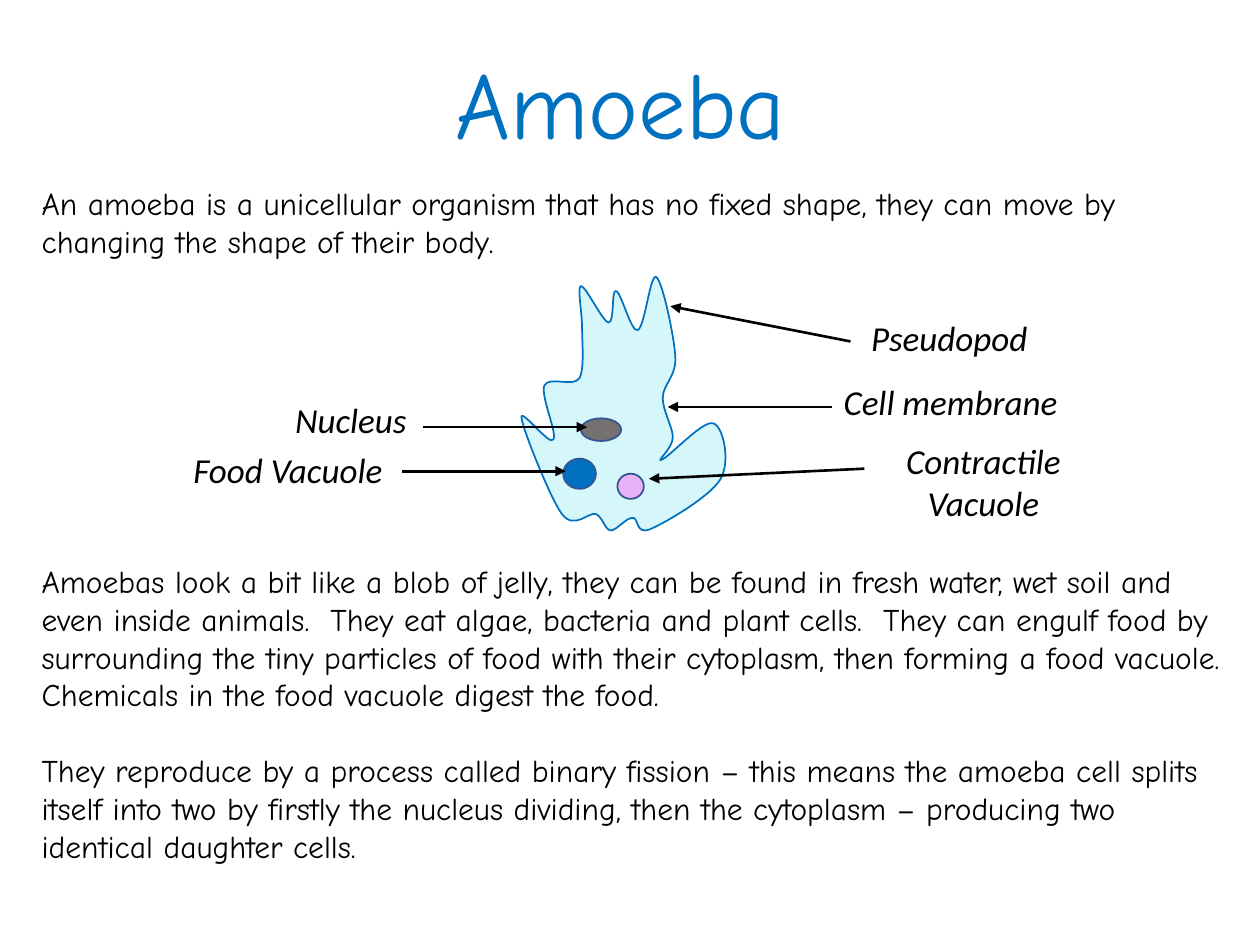
from lxml import etree
from pptx import Presentation
from pptx.dml.color import RGBColor
from pptx.enum.shapes import MSO_CONNECTOR as Connector, MSO_SHAPE as Shape
from pptx.enum.text import MSO_ANCHOR as Anchor, MSO_AUTO_SIZE as AutoSize, PP_ALIGN as Align
from pptx.oxml.ns import qn
from pptx.util import Inches, Pt


def color(hex_string):
    return RGBColor.from_string(hex_string)


def write(shape, box, texts, font_format, alignment):
    """Place a text shape and fill it with formatted paragraphs."""
    shape.left, shape.top, shape.width, shape.height = map(Inches, box)
    frame = shape.text_frame
    frame.text = "\n".join(texts)
    frame.word_wrap = True
    frame.auto_size = AutoSize.NONE
    frame.vertical_anchor = Anchor.TOP
    for paragraph in frame.paragraphs:
        paragraph.alignment = alignment
        paragraph.space_before = Pt(0)
        font = paragraph.runs[0].font
        for name, value in font_format.items():
            setattr(font, name, value)
        font.color.rgb = color("0070C0" if font.size == Pt(54) else "000000")


presentation = Presentation()
presentation.slide_width, presentation.slide_height = Inches(10), Inches(7.5)
slide = presentation.slides.add_slide(presentation.slide_layouts[1])
shapes = slide.shapes

# Title and body
write(shapes.title, (0.21, 0.31, 9.43, 1.01), ["Amoeba"],
      {"name": "Comic Neue", "size": Pt(54)}, Align.CENTER)

body = slide.placeholders[1]
write(body, (0.23, 1.41, 9.62, 5.55), [
    "An amoeba is a unicellular organism that has no fixed shape, they can move by "
    "changing the shape of their body.",
    "Amoebas look a bit like a blob of jelly, they can be found in fresh water, wet soil "
    "and even inside animals.  They eat algae, bacteria and plant cells.  They can engulf "
    "food by surrounding the tiny particles of food with their cytoplasm, then forming a "
    "food vacuole. Chemicals in the food vacuole digest the food.",
    "They reproduce by a process called binary fission – this means the amoeba cell splits "
    "itself into two by firstly the nucleus dividing, then the cytoplasm – producing two "
    "identical daughter cells.",
], {"name": "Comic Neue", "size": Pt(18)}, Align.LEFT)
for paragraph, gap in zip(body.text_frame.paragraphs, (0, 172.8, 21.6)):
    paragraph.space_before = Pt(gap)
    properties = paragraph._p.get_or_add_pPr()
    properties.set("marL", "0")
    properties.set("indent", "0")
    etree.SubElement(properties, qn("a:buNone"))

# Cell outline: a start point, then two control points and an end point per curve
outline = [
    (4.62, 2.6),
    (4.62, 2.48), (4.58, 2.28), (4.61, 2.27),
    (4.65, 2.27), (4.78, 2.55), (4.83, 2.56),
    (4.88, 2.56), (4.85, 2.29), (4.89, 2.31),
    (4.93, 2.32), (5.01, 2.64), (5.06, 2.62),
    (5.12, 2.6), (5.16, 2.16), (5.21, 2.2),
    (5.26, 2.24), (5.35, 2.67), (5.36, 2.83),
    (5.37, 2.99), (5.26, 3.05), (5.26, 3.16),
    (5.26, 3.26), (5.34, 3.39), (5.34, 3.47),
    (5.34, 3.56), (5.2, 3.67), (5.25, 3.65),
    (5.31, 3.63), (5.58, 3.33), (5.66, 3.36),
    (5.74, 3.38), (5.8, 3.66), (5.72, 3.8),
    (5.64, 3.94), (5.28, 4.15), (5.16, 4.2),
    (5.04, 4.25), (5.07, 4.1), (5.02, 4.11),
    (4.97, 4.11), (4.89, 4.21), (4.85, 4.21),
    (4.8, 4.21), (4.79, 4.11), (4.73, 4.08),
    (4.67, 4.06), (4.56, 4.21), (4.46, 4.08),
    (4.37, 3.96), (4.15, 3.41), (4.14, 3.32),
    (4.12, 3.22), (4.36, 3.54), (4.39, 3.49),
    (4.43, 3.45), (4.29, 3.15), (4.32, 3.06),
    (4.36, 2.98), (4.55, 3.08), (4.6, 3),
    (4.64, 2.92), (4.62, 2.72), (4.62, 2.6),
]
start, *curve_points = [(Inches(x), Inches(y)) for x, y in outline]
builder = shapes.build_freeform(*start)
builder.add_line_segments(curve_points, close=True)
cell = builder.convert_to_shape()

# Turn every three straight segments into one Bézier curve
segments = list(cell._element.iter(qn("a:lnTo")))
for first in range(0, len(segments), 3):
    curve = etree.Element(qn("a:cubicBezTo"))
    segments[first].addprevious(curve)
    for segment in segments[first:first + 3]:
        curve.append(segment[0])
        segment.getparent().remove(segment)

# Organelles
organelles = [
    ((4.61, 3.32, 0.32, 0.18), "767171"),  # nucleus
    ((4.9, 3.76, 0.21, 0.2), "E9B2F8"),    # contractile vacuole
    ((4.47, 3.64, 0.26, 0.24), "0070C0"),  # food vacuole
]
parts = [(cell, "D6F7FA", "0070C0")]
for box, fill in organelles:
    parts.append((shapes.add_shape(Shape.OVAL, *map(Inches, box)), fill, "325491"))
for shape, fill, line in parts:
    shape.shadow.inherit = False
    shape.fill.solid()
    shape.fill.fore_color.rgb = color(fill)
    shape.line.color.rgb = color(line)
    shape.line.width = Pt(1)

# Labels, each with the arrow to its part
labels = [
    ("Pseudopod", (6.77, 2.46, 1.53, 0.44), (6.75, 2.71, 5.32, 2.43)),
    ("Cell membrane", (6.58, 2.97, 1.93, 0.44), (6.6, 3.23, 5.3, 3.23)),
    ("Contractile Vacuole", (6.84, 3.44, 1.93, 0.77), (6.86, 3.72, 5.15, 3.8)),
    ("Food Vacuole", (1.32, 3.51, 1.93, 0.44), (3.19, 3.74, 4.49, 3.74)),
    ("Nucleus", (1.82, 3.11, 1.93, 0.44), (3.36, 3.39, 4.66, 3.39)),
]
for text, box, ends in labels:
    arrow = shapes.add_connector(Connector.STRAIGHT, *map(Inches, ends))
    arrow.line.color.rgb = color("000000")
    arrow.line.width = Pt(1.5)
    etree.SubElement(arrow.line._get_or_add_ln(), qn("a:tailEnd"), type="triangle")
    etree.SubElement(arrow._element.spPr, qn("a:effectLst"))
    write(shapes.add_textbox(*map(Inches, box)), box, [text],
          {"name": "Calibri", "size": Pt(20), "italic": True}, Align.CENTER)

presentation.save("out.pptx")
